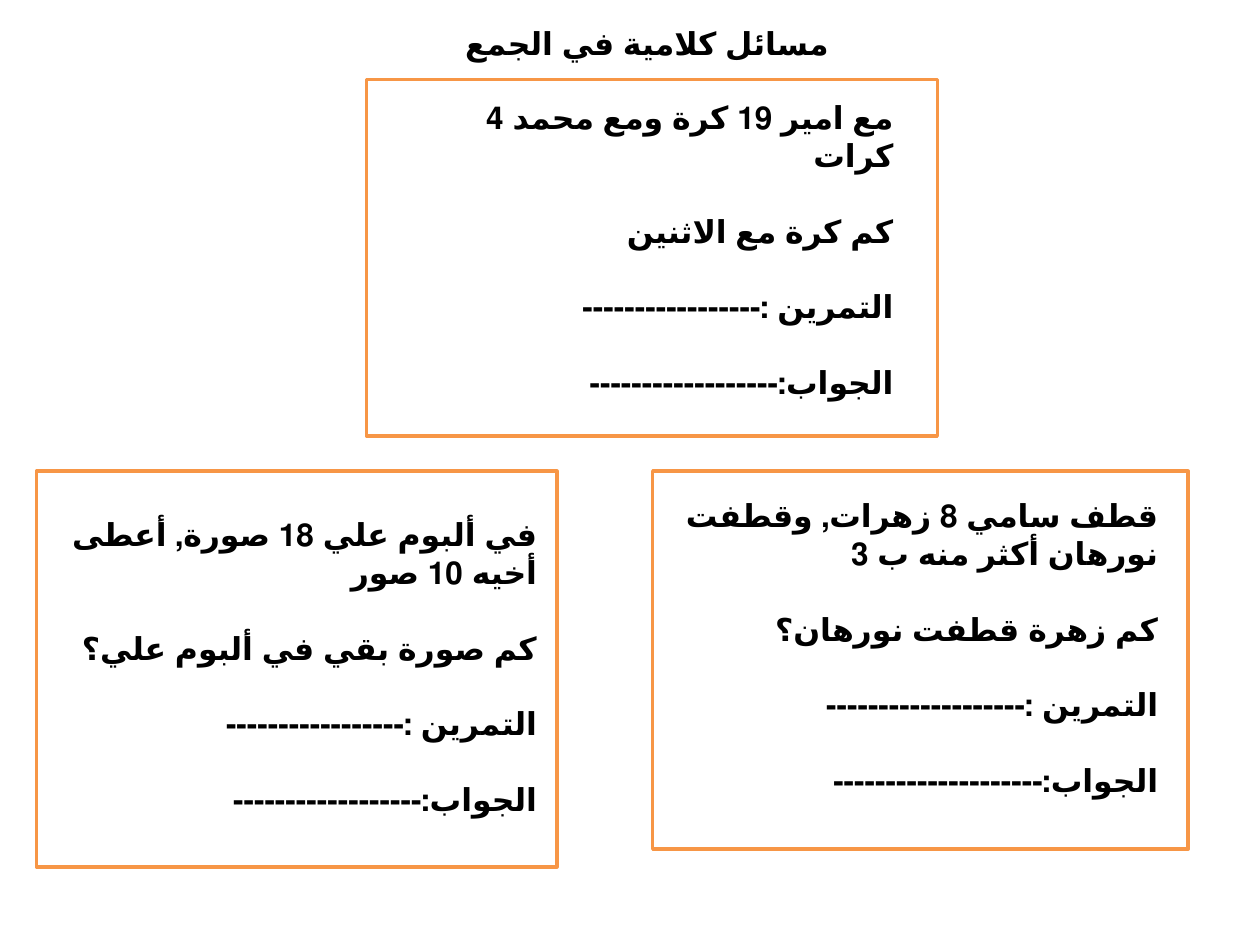
from pptx import Presentation
from pptx import util as u
from pptx.dml.color import RGBColor
from pptx.enum import lang, shapes, text

INK, EDGE, PAPER = "000000", "F79646", "FFFFFF"
FONT = {"name": "Calibri", "size": u.Pt(18), "bold": True,
        "language_id": lang.MSO_LANGUAGE_ID.ARABIC}
LINE = 21.6  # height of one text line in points


def color(code):
    return RGBColor.from_string(code)


def place(shape, box):
    sides = ("left", "top", "width", "height")
    for side, value in zip(sides, box):
        setattr(shape, side, u.Inches(value))


def write(shape, lines, align, gap=0):
    """Fill a shape with right-to-left paragraphs, gap points apart."""
    frame = shape.text_frame
    frame.word_wrap = True
    frame.auto_size = text.MSO_AUTO_SIZE.SHAPE_TO_FIT_TEXT
    frame.vertical_anchor = text.MSO_ANCHOR.TOP
    for i, line in enumerate(lines):
        para = frame.paragraphs[0] if i == 0 else frame.add_paragraph()
        para.alignment = align
        para._p.get_or_add_pPr().set("rtl", "1")
        para.space_before = u.Pt(gap if i else 0)
        run = para.add_run()
        run.text = line
        for key, value in FONT.items():
            setattr(run.font, key, value)
        run.font.color.rgb = color(INK)


def add_title(slide, box, words):
    title = slide.shapes.title
    place(title, box)
    write(title, [words], text.PP_ALIGN.CENTER)


def add_card(slide, box, inset, lines):
    """Draw a framed problem; inset is the text's offset and size."""
    left, top, width, height = box
    dx, dy, wide, high = inset
    card = slide.shapes.add_shape(
        shapes.MSO_SHAPE.RECTANGLE, *map(u.Inches, box))
    card.shadow.inherit = False
    card.fill.solid()
    card.fill.fore_color.rgb = color(PAPER)
    card.line.color.rgb = color(EDGE)
    card.line.width = u.Pt(2)
    area = (left + dx, top + dy, wide, high)
    note = slide.shapes.add_textbox(*map(u.Inches, area))
    write(note, lines, text.PP_ALIGN.RIGHT, LINE)


def blanks(count):
    """Exercise and answer lines; the answer has one more dash."""
    return ["التمرين :" + "-" * count, "الجواب:" + "-" * (count + 1)]


CARDS = [
    ((2.91, 0.63, 4.53, 2.83), (0.45, 0.1, 3.83, 2.22),
     ["مع امير 19 كرة ومع محمد 4 كرات", "كم كرة مع الاثنين"], 17),
    ((5.18, 3.74, 4.25, 3), (-0.14, 0.15, 4.25, 2.52),
     ["قطف سامي 8 زهرات, وقطفت نورهان أكثر منه ب 3",
      "كم زهرة قطفت نورهان؟"], 19),
    ((0.29, 3.74, 4.13, 3.14), (-0.02, 0.3, 4.09, 2.22),
     ["في ألبوم علي 18 صورة, أعطى أخيه 10 صور",
      "كم صورة بقي في ألبوم علي؟"], 17),
]


def main():
    deck = Presentation()
    deck.slide_width, deck.slide_height = u.Inches(10), u.Inches(7.5)
    slide = deck.slides.add_slide(deck.slide_layouts[5])
    add_title(slide, (2.58, 0.14, 5.04, 0.4), "مسائل كلامية في الجمع ")
    for box, inset, task, dashes in CARDS:
        add_card(slide, box, inset, task + blanks(dashes))
    deck.save("out.pptx")


if __name__ == "__main__":
    main()
